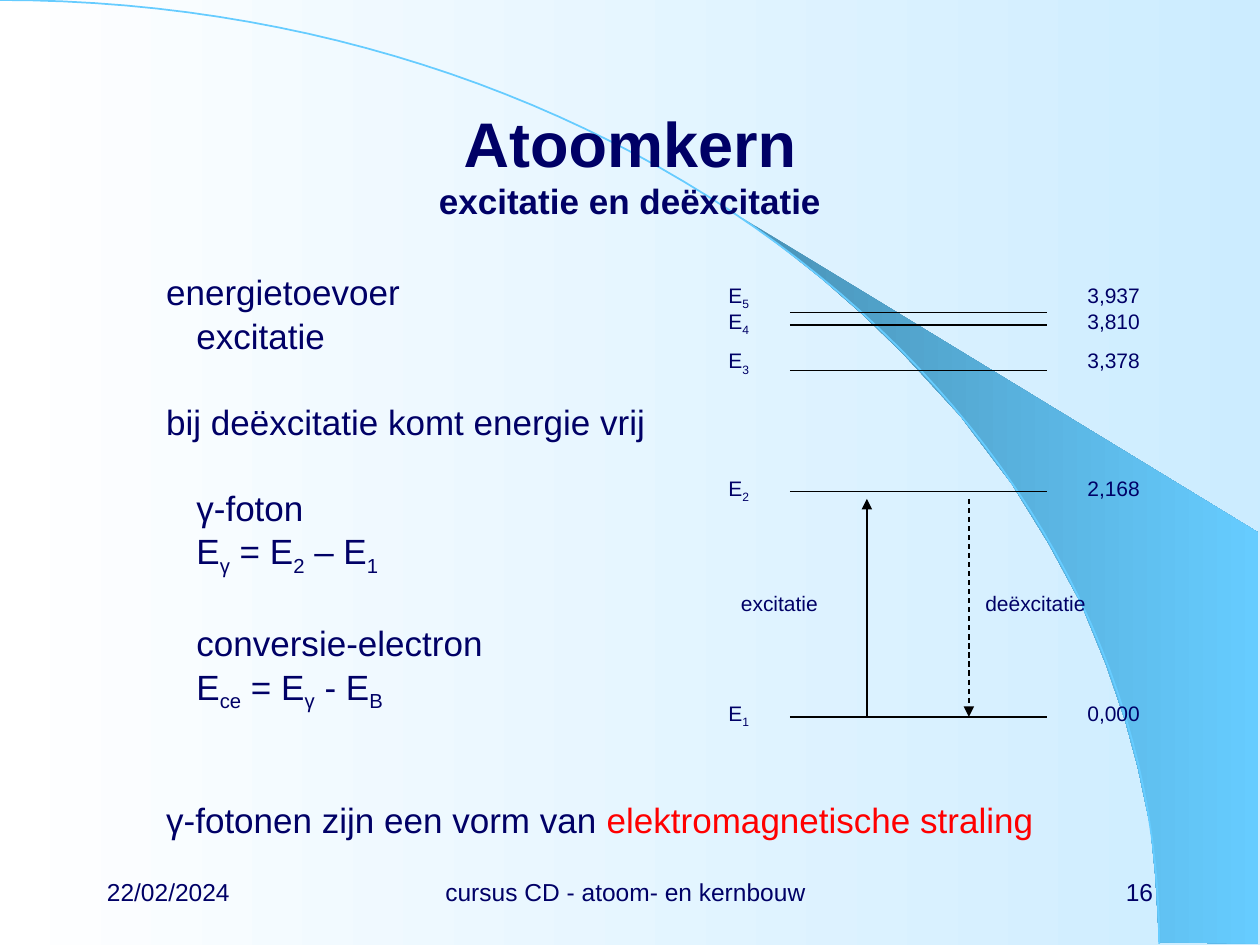
from pptx import Presentation
from pptx.dml.color import RGBColor
from pptx.enum.dml import MSO_LINE
from pptx.enum.shapes import MSO_CONNECTOR
from pptx.enum.text import MSO_ANCHOR, PP_ALIGN
from pptx.oxml.ns import qn
from pptx.util import Inches, Pt
from lxml import etree

NAVY, SKY, BLACK, RED = "000066", "66CCFF", "000000", "FF0000"
rgb = RGBColor.from_string


def add_text(p, text, size):
    """Fill a paragraph; every second part between bars is a subscript."""
    p.font.size, p.font.name, p.font.color.rgb = Pt(size), "Arial", rgb(NAVY)
    for i, part in enumerate(text.split("|")):
        if part:
            r = p.add_run()
            r.text = part
            if i % 2:
                r.font._element.set("baseline", "-25000")


def add_box(x, y, w, h, text, size, inset=0.02, align=PP_ALIGN.LEFT, anchor=MSO_ANCHOR.TOP):
    tf = s.shapes.add_textbox(Inches(x), Inches(y), Inches(w), Inches(h)).text_frame
    tf.word_wrap = True
    tf.vertical_anchor = anchor
    tf.margin_left = tf.margin_right = Inches(inset)
    tf.margin_top = tf.margin_bottom = Inches(min(inset, 0.05))
    tf.paragraphs[0].alignment = align
    add_text(tf.paragraphs[0], text, size)
    return tf


prs = Presentation()
prs.slide_width, prs.slide_height = Inches(10), Inches(7.5)
s = prs.slides.add_slide(prs.slide_layouts[5])

# Background and wedge
wedge_points = [
    (9.2, 7.48), (9.99, 7.49), (9.99, 4.23), (5.89, 1.73), (6.24, 1.99), (6.53, 2.22),
    (6.85, 2.5), (7.16, 2.8), (7.62, 3.3), (8.03, 3.84), (8.32, 4.31), (8.58, 4.79),
    (8.78, 5.28), (8.93, 5.72), (9.03, 6.09), (9.13, 6.56), (9.17, 6.96),
]
fb = s.shapes.build_freeform(Inches(9.2), Inches(7.48))
fb.add_line_segments([(Inches(x), Inches(y)) for x, y in wedge_points[1:]], close=True)
wedge = fb.convert_to_shape()
wedge.shadow.inherit = False
wedge.line.fill.background()
for fill, colors in ((s.background.fill, ("FFFFFF", "CCECFF")), (wedge.fill, ("4992B6", SKY))):
    fill.gradient()
    fill.gradient_angle = 0
    for stop, position, color in zip(fill.gradient_stops, (0, 1), colors):
        stop.position, stop.color.rgb = position, rgb(color)

# Arc: a quarter ellipse as a sampled Bezier curve
arc_points = []
for i in range(1, 61):
    t = i / 60
    u = 1 - t
    x = 3 * u * u * t * 5.08 + 3 * u * t * t * 9.2 + t ** 3 * 9.2
    y = 3 * u * t * t * 3.35 + t ** 3 * 7.49
    arc_points.append((Inches(x), Inches(y)))
fb = s.shapes.build_freeform(0, 0)
fb.add_line_segments(arc_points, close=False)
arc = fb.convert_to_shape()
arc.shadow.inherit = False
arc.fill.background()
arc.line.color.rgb, arc.line.width = rgb(SKY), Pt(1)

# Title, moved in front of the arc
title = s.shapes.title
title._element.getparent().append(title._element)
title.left, title.top, title.width, title.height = (Inches(v) for v in (0.75, 0.67, 8.5, 1.25))
title.text_frame.vertical_anchor = MSO_ANCHOR.MIDDLE
p = title.text_frame.paragraphs[0]
p.alignment = PP_ALIGN.CENTER
add_text(p, "Atoomkern", 36)
p.font.bold = True
p.add_line_break()
r = p.add_run()
r.text, r.font.size = "excitatie en deëxcitatie", Pt(20)

# Body: text, left indent, empty lines above
body = [
    ("energietoevoer", 0.47, 0),
    ("excitatie", 0.71, 0),
    ("bij deëxcitatie komt energie vrij", 0.47, 1),
    ("γ-foton", 0.71, 1),
    ("E|γ| = E|2| – E|1", 0.71, 0),
    ("conversie-electron", 0.71, 1),
    ("E|ce| = E|γ| - E|B", 0.71, 0),
    ("γ-fotonen zijn een vorm van ", 0.47, 2),
]
tf = add_box(0.75, 2.1, 8.68, 4.58, "", 20, inset=0.1)
for i, (text, indent, gap) in enumerate(body):
    p = tf.add_paragraph() if i else tf.paragraphs[0]
    add_text(p, text, 20)
    p.space_before = Pt(1 + 24 * gap)
    pPr = p._p.get_or_add_pPr()
    pPr.set("marL", str(Inches(indent)))
    pPr.set("indent", "0")
r = p.add_run()
r.text, r.font.color.rgb = "elektromagnetische straling", rgb(RED)

# Energy levels: number, energy, line height, label height
levels = [
    (1, "0,000", 5.69, 5.54),
    (2, "2,168", 3.9, 3.75),
    (3, "3,378", 2.94, 2.74),
    (4, "3,810", 2.58, 2.43),
    (5, "3,937", 2.48, 2.22),
]
lines = []
for number, energy, y, label_y in levels:
    lines.append((6.27, y, 8.31, y, False, False))
    add_box(5.76, label_y, 0.35, 0.35, f"E|{number}", 12)
    add_box(8.61, label_y, 0.71, 0.35, energy, 12)

# Level lines and transition arrows
lines += [(6.88, 5.69, 6.88, 3.96, True, False), (7.69, 3.96, 7.69, 5.69, True, True)]
for x1, y1, x2, y2, arrow, dashed in lines:
    c = s.shapes.add_connector(MSO_CONNECTOR.STRAIGHT, Inches(x1), Inches(y1), Inches(x2), Inches(y2))
    c.line.color.rgb, c.line.width = rgb(BLACK), Pt(0.75)
    if dashed:
        c.line.dash_style = MSO_LINE.DASH
    if arrow:
        etree.SubElement(c.line._get_or_add_ln(), qn("a:tailEnd"), type="triangle")
    etree.SubElement(c._element.spPr, qn("a:effectLst"))
add_box(5.86, 4.67, 0.92, 0.35, "excitatie", 12)
add_box(7.8, 4.67, 1.12, 0.35, "deëxcitatie", 12)

# Footer
for x, w, text, align in (
    (0.75, 2.08, "22/02/2024", PP_ALIGN.LEFT),
    (2.8, 4.33, "cursus CD - atoom- en kernbouw", PP_ALIGN.CENTER),
    (7.17, 2.08, "16", PP_ALIGN.RIGHT),
):
    add_box(x, 6.83, w, 0.5, text, 14, 0.1, align, MSO_ANCHOR.MIDDLE)

prs.save("out.pptx")
